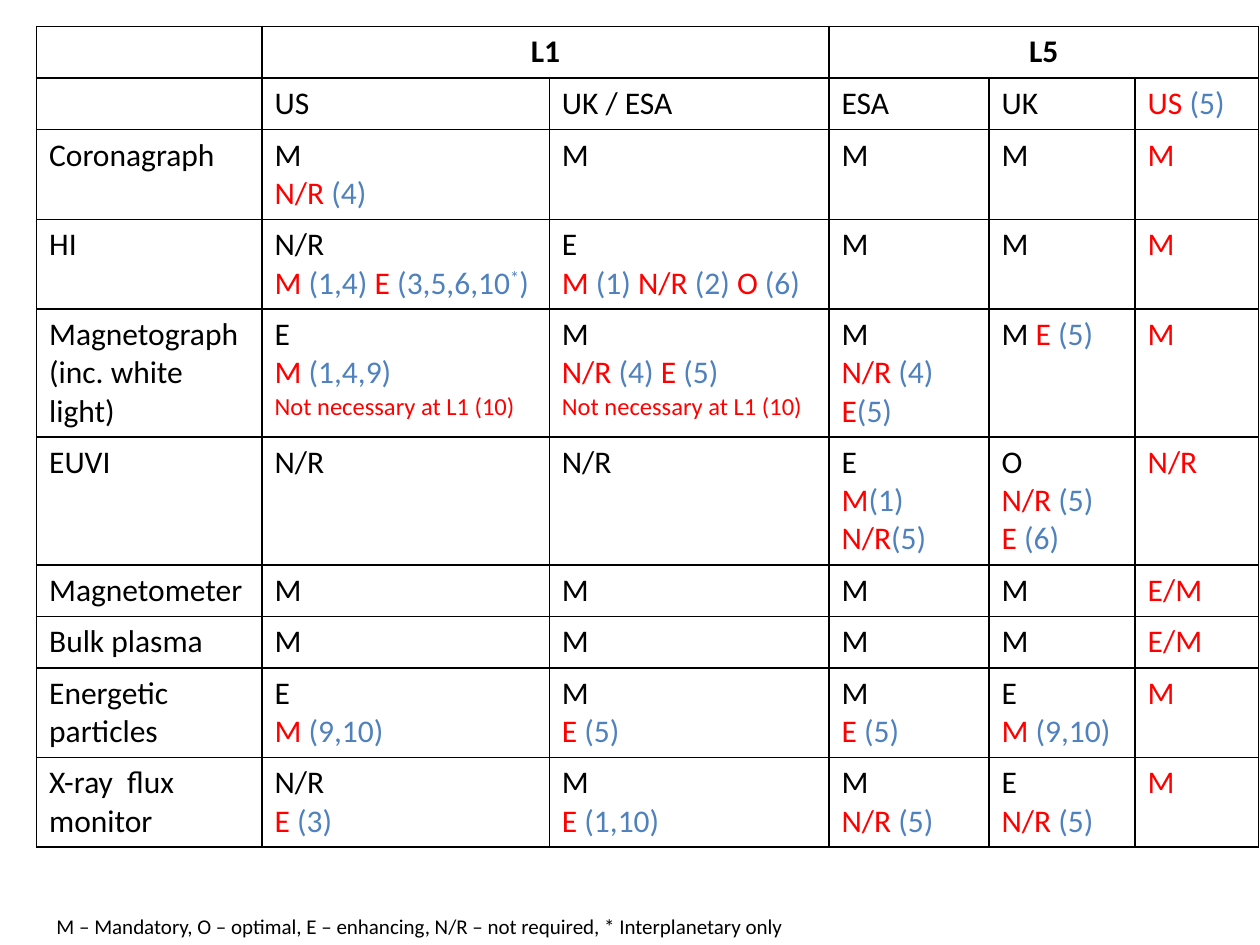
"""Build a slide comparing instrument requirements at L1 and L5."""
from dataclasses import dataclass

from lxml.etree import SubElement
from pptx import Presentation
from pptx.dml.color import RGBColor
from pptx.enum.text import MSO_AUTO_SIZE, PP_ALIGN
from pptx.oxml.ns import qn
from pptx.util import Inches, Pt

COLORS = {"black": "000000", "red": "FF0000", "blue": "4F81BD"}
FONT = "Calibri"
COLUMNS = [1.79, 2.28, 2.22, 1.27, 1.16, 0.98]
ROW_HEIGHT = 0.41


@dataclass(frozen=True)
class Style:
    color: str = "black"
    size: int = 18
    bold: bool = False
    baseline: int = 0


@dataclass(frozen=True)
class Group:
    label: str
    first: int
    last: int


STYLES = {
    "<": Style("red"),
    "[": Style("blue"),
    "~": Style("red", 14),
    "^": Style("blue", baseline=30000),
}
GROUPS = [Group("L1", 1, 2), Group("L5", 3, 5)]
ROWS = [
    ["", "US", "UK / ESA", "ESA", "UK", "<US [(5)"],
    ["Coronagraph", "M\n<N/R [(4)", "M", "M", "M", "<M"],
    ["HI", "N/R\n<M [(1,4) <E [(3,5,6,10^*[)",
     "E\n<M [(1) <N/R [(2) <O [(6)", "M", "M", "<M"],
    ["Magnetograph\n(inc. white light)",
     "E\n<M [(1,4,9)\n~Not necessary at L1 (10)",
     "M\n<N/R [(4) <E [(5)\n~Not necessary at L1 (10)",
     "M\n<N/R [(4) <E[(5)", "M <E [(5)", "<M"],
    ["EUVI", "N/R", "N/R", "E\n<M[(1) <N/R[(5)",
     "O\n<N/R [(5)\n<E [(6)", "<N/R"],
    ["Magnetometer", "M", "M", "M", "M", "<E/M"],
    ["Bulk plasma", "M", "M", "M", "M", "<E/M"],
    ["Energetic particles", "E\n<M [(9,10)", "M\n<E [(5)",
     "M\n<E [(5)", "E\n<M [(9,10)", "<M"],
    ["X-ray  flux monitor", "N/R\n<E [(3)", "M\n<E [(1,10)",
     "M\n<N/R [(5)", "E\n<N/R[ (5)", "<M"],
]


def split_line(line: str, base: Style) -> list[tuple[str, Style]]:
    """Split a marked line into pieces of text with their styles."""
    pieces = [("", base)]
    for char in line:
        if char in STYLES:
            pieces.append(("", STYLES[char]))
        else:
            text, style = pieces[-1]
            pieces[-1] = (text + char, style)
    return [piece for piece in pieces if piece[0]]


def write(tf, markup: str, base: Style = Style(), align=PP_ALIGN.LEFT) -> None:
    """Fill a text frame with marked lines, one paragraph each."""
    for i, line in enumerate(markup.split("\n")):
        p = tf.add_paragraph() if i else tf.paragraphs[0]
        p.alignment = align
        p.font.size = Pt(base.size)
        for text, style in split_line(line, base):
            r = p.add_run()
            r.text = text
            r.font.name = FONT
            r.font.size = Pt(style.size)
            r.font.bold = style.bold
            r.font.color.rgb = RGBColor.from_string(COLORS[style.color])
            if style.baseline:
                r.font._element.set("baseline", str(style.baseline))


def frame_cell(cell) -> None:
    """Give a cell thin black borders and no fill."""
    tc_pr = cell._tc.get_or_add_tcPr()
    for side in ("lnL", "lnR", "lnT", "lnB"):
        ln = SubElement(tc_pr, qn(f"a:{side}"), w=str(Pt(1)))
        fill = SubElement(ln, qn("a:solidFill"))
        SubElement(fill, qn("a:srgbClr"), val=COLORS["black"])
    cell.fill.background()


def add_requirements(s) -> None:
    """Add the table of requirements by instrument and agency."""
    count = len(ROWS) + 1
    table = s.shapes.add_table(
        count, len(COLUMNS), Inches(0.29), Inches(0.21),
        Inches(sum(COLUMNS)), Inches(ROW_HEIGHT * count)).table
    table.first_row = False
    table.horz_banding = False
    for column, width in zip(table.columns, COLUMNS):
        column.width = Inches(width)
    for row in table.rows:
        row.height = Inches(ROW_HEIGHT)
    for cell in table.iter_cells():
        frame_cell(cell)
    for group in GROUPS:
        cell = table.cell(0, group.first)
        cell.merge(table.cell(0, group.last))
        write(cell.text_frame, group.label, Style(bold=True), PP_ALIGN.CENTER)
    for i, row in enumerate(ROWS, start=1):
        for j, markup in enumerate(row):
            write(table.cell(i, j).text_frame, markup)


def add_key(s) -> None:
    """Add the key to the abbreviations below the table."""
    tf = s.shapes.add_textbox(
        Inches(0.35), Inches(7.2), Inches(5.97), Inches(0.3)).text_frame
    tf.word_wrap = False
    tf.auto_size = MSO_AUTO_SIZE.SHAPE_TO_FIT_TEXT
    write(tf, "M – Mandatory, O – optimal, E – enhancing, N/R – not required, "
              "* Interplanetary only", Style(size=12))


def main() -> None:
    """Build and save the slide."""
    prs = Presentation()
    prs.slide_width = Inches(10)
    prs.slide_height = Inches(7.5)
    s = prs.slides.add_slide(prs.slide_layouts[6])
    add_requirements(s)
    add_key(s)
    prs.save("out.pptx")


if __name__ == "__main__":
    main()
